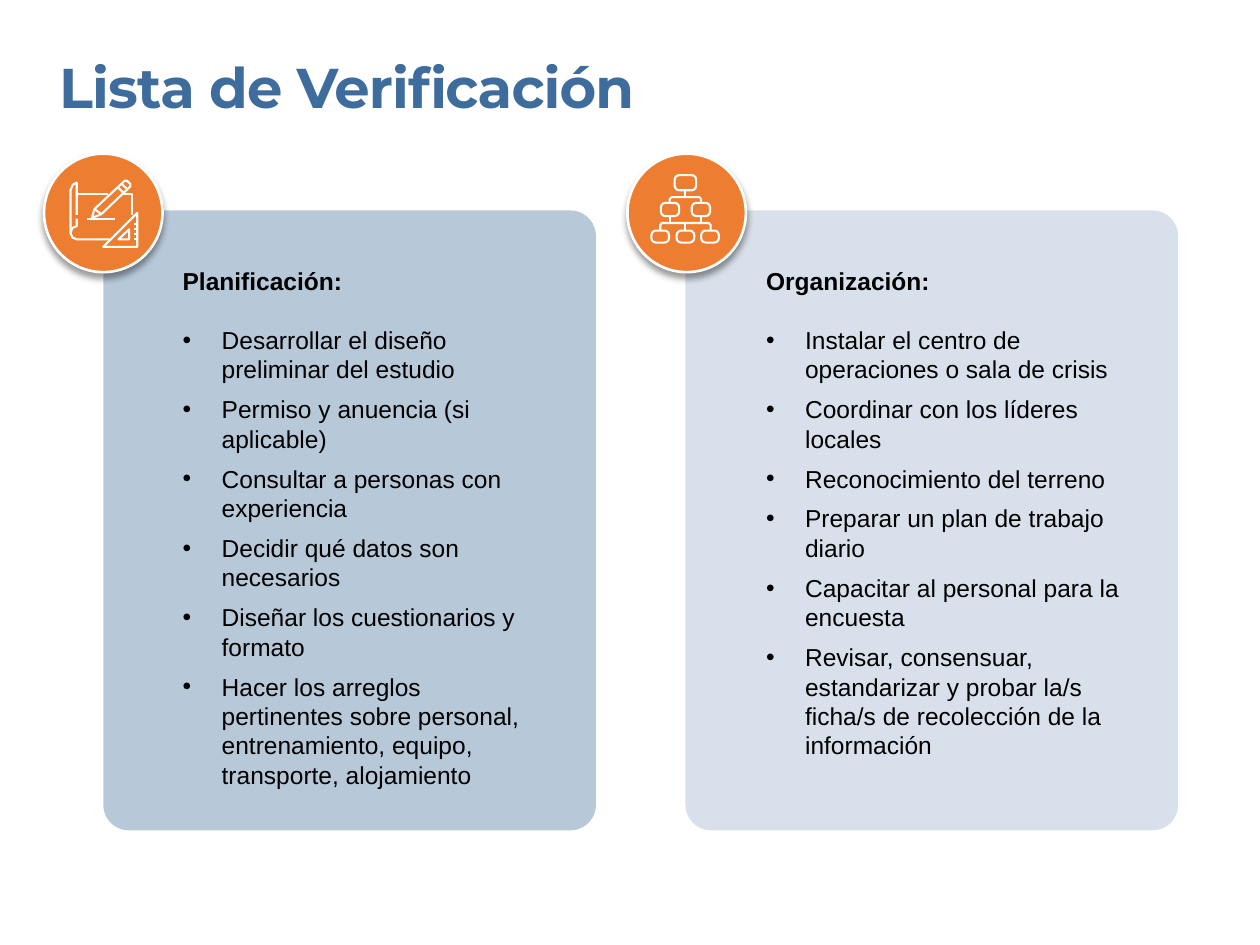
"""Build the checklist slide with its planning and organisation panels."""

from dataclasses import dataclass
from math import cos, radians, sin

from lxml import etree
from pptx import Presentation
from pptx.dml.color import RGBColor
from pptx.enum.shapes import MSO_SHAPE
from pptx.enum.text import MSO_ANCHOR, MSO_AUTO_SIZE, PP_ALIGN
from pptx.oxml.ns import qn
from pptx.shapes.autoshape import Shape
from pptx.slide import Slide
from pptx.text.text import TextFrame
from pptx.util import Inches, Pt

ROUNDED = MSO_SHAPE.ROUNDED_RECTANGLE
OVAL = MSO_SHAPE.OVAL
TOP = MSO_ANCHOR.TOP
LEFT = PP_ALIGN.LEFT
NO_AUTO_SIZE = MSO_AUTO_SIZE.NONE
TITLE_ONLY = 5
ICON_UNIT = Inches(1) / 1000


@dataclass(frozen=True)
class Theme:
    blue: RGBColor = RGBColor(0x3D, 0x6C, 0x9D)
    pale_blue: RGBColor = RGBColor(0xB7, 0xC8, 0xD9)
    orange: RGBColor = RGBColor(0xED, 0x7D, 0x31)
    white: RGBColor = RGBColor(0xFF, 0xFF, 0xFF)
    black: RGBColor = RGBColor(0, 0, 0)
    title_font: str = "Montserrat"
    body_font: str = "Arial"
    title_size: Pt = Pt(32)
    body_size: Pt = Pt(14)
    icon_line: Pt = Pt(1.2)
    badge_line: Pt = Pt(1.5)


@dataclass(frozen=True)
class Stroke:
    points: tuple[tuple[float, float], ...]
    closed: bool = False


@dataclass(frozen=True)
class Icon:
    left: float
    top: float
    strokes: tuple[Stroke, ...]


@dataclass(frozen=True)
class Panel:
    left: float
    badge_left: float
    text_left: float
    text_width: float
    text_height: float
    fill: RGBColor
    opacity: int
    heading: str
    items: tuple[str, ...]
    icons: tuple[Icon, ...]


def rounded_box(x: float, y: float, width: float, height: float, radius: float = 35) -> Stroke:
    """Return a closed rectangle stroke with rounded corners."""
    corners = ((x + width - radius, y + height - radius), (x + radius, y + height - radius),
               (x + radius, y + radius), (x + width - radius, y + radius))
    return Stroke(tuple(
        (center_x + radius * cos(radians(angle)), center_y + radius * sin(radians(angle)))
        for quarter, (center_x, center_y) in enumerate(corners)
        for angle in range(quarter * 90, quarter * 90 + 91, 30)
    ), True)


THEME = Theme()

BLUEPRINT = Icon(0.55, 1.42, (
    Stroke(((60, 285), (60, 30), (30, 45), (10, 90), (10, 430), (25, 465), (60, 480), (325, 480))),
    Stroke(((60, 315), (60, 375), (25, 390), (10, 430))),
    Stroke(((60, 120), (310, 120))),
    Stroke(((430, 120), (500, 120), (500, 285))),
    Stroke(((180, 310), (200, 240), (440, 15), (460, 15), (485, 40), (485, 60), (255, 280)), True),
    Stroke(((200, 240), (255, 280))),
    Stroke(((385, 65), (435, 115))),
    Stroke(((415, 40), (465, 85))),
    Stroke(((140, 320), (365, 320))),
    Stroke(((270, 540), (540, 270), (540, 540)), True),
    *(Stroke(((515, y), (540, y))) for y in range(360, 520, 40)),
))

SET_SQUARE_HOLE = Icon(0.93, 1.81, (Stroke(((10, 90), (95, 10), (95, 90)), True),))

HIERARCHY = Icon(5.16, 1.38, (
    Stroke(((280, 130), (280, 185))),
    Stroke(((155, 230), (155, 200), (170, 185), (390, 185), (405, 200), (405, 230))),
    Stroke(((155, 335), (155, 390))),
    Stroke(((405, 335), (405, 390))),
    Stroke(((80, 450), (80, 405), (95, 390), (465, 390), (480, 405), (480, 450))),
    Stroke(((280, 390), (280, 450))),
    rounded_box(195, 10, 170, 120),
    *(rounded_box(x, 230, 145, 105) for x in (85, 330)),
    *(rounded_box(x, 450, 140, 95) for x in (10, 210, 405)),
))

PANELS = (
    Panel(0.82, 0.35, 1.45, 2.9, 4.19, THEME.pale_blue, 100, "Planificación:", (
        "Desarrollar el diseño preliminar del estudio",
        "Permiso y anuencia (si aplicable)",
        "Consultar a personas con experiencia",
        "Decidir qué datos son necesarios",
        "Diseñar los cuestionarios y formato",
        "Hacer los arreglos pertinentes sobre personal, entrenamiento, equipo, "
        "transporte, alojamiento",
    ), (BLUEPRINT, SET_SQUARE_HOLE)),
    Panel(5.44, 4.98, 6.08, 3.01, 3.95, THEME.blue, 20, "Organización:", (
        "Instalar el centro de operaciones o sala de crisis",
        "Coordinar con los líderes locales",
        "Reconocimiento del terreno",
        "Preparar un plan de trabajo diario",
        "Capacitar al personal para la encuesta",
        "Revisar, consensuar, estandarizar y probar la/s ficha/s de recolección "
        "de la información",
    ), (HIERARCHY,)),
)


def prepare_frame(frame: TextFrame) -> None:
    """Give a text frame wrapping, no margins and top anchoring."""
    frame.word_wrap = True
    frame.auto_size = NO_AUTO_SIZE
    frame.vertical_anchor = TOP
    frame.margin_left = frame.margin_right = frame.margin_top = frame.margin_bottom = 0


def add_title(slide: Slide) -> None:
    """Place and format the slide title."""
    title = slide.shapes.title
    title.left, title.top = Inches(0.47), Inches(0.42)
    title.width, title.height = Inches(8.55), Inches(0.54)
    prepare_frame(title.text_frame)
    para = title.text_frame.paragraphs[0]
    para.alignment = LEFT
    span = para.add_run()
    span.text = "Lista de Verificación"
    span.font.name, span.font.size, span.font.bold = THEME.title_font, THEME.title_size, True
    span.font.color.rgb = THEME.blue
    span._r.get_or_add_rPr().set("spc", "-50")


def fill_shape(shape: Shape, color: RGBColor, opacity: int = 100) -> None:
    """Give a shape a solid fill, partly transparent if asked."""
    shape.fill.solid()
    shape.fill.fore_color.rgb = color
    if opacity < 100:
        element = shape._element.spPr.find(f"{qn('a:solidFill')}/{qn('a:srgbClr')}")
        etree.SubElement(element, qn("a:alpha"), val=str(opacity * 1000))


def add_shadow(shape: Shape) -> None:
    """Give a shape a soft shadow below it."""
    shape.shadow.inherit = False
    effects = shape._element.spPr.find(qn("a:effectLst"))
    shadow = etree.SubElement(effects, qn("a:outerShdw"), blurRad=str(Pt(4)),
                              dist=str(Pt(3)), dir="5400000", rotWithShape="0")
    color = etree.SubElement(shadow, qn("a:srgbClr"), val=str(THEME.black))
    etree.SubElement(color, qn("a:alpha"), val="40000")


def add_icon(slide: Slide, icon: Icon) -> None:
    """Draw the white strokes of an icon."""
    builder = slide.shapes.build_freeform(*icon.strokes[0].points[0], scale=ICON_UNIT)
    for index, stroke in enumerate(icon.strokes):
        if index:
            builder.move_to(*stroke.points[0])
        builder.add_line_segments(stroke.points[1:], close=stroke.closed)
    drawing = builder.convert_to_shape(Inches(icon.left), Inches(icon.top))
    drawing.shadow.inherit = False
    drawing.fill.background()
    drawing.line.color.rgb = THEME.white
    drawing.line.width = THEME.icon_line


def add_bullet(frame: TextFrame, text: str) -> None:
    """Append one bulleted paragraph."""
    para = frame.add_paragraph()
    para.text = text
    para.space_after = Pt(6)
    properties = para._p.get_or_add_pPr()
    properties.set("marL", str(Inches(0.31)))
    properties.set("indent", str(-Inches(0.31)))
    color = etree.SubElement(properties, qn("a:buClr"))
    etree.SubElement(color, qn("a:srgbClr"), val=str(THEME.black))
    etree.SubElement(properties, qn("a:buFont"), typeface=THEME.body_font)
    etree.SubElement(properties, qn("a:buChar"), char="•")


def add_checklist(slide: Slide, panel: Panel) -> None:
    """Write the heading and items of a panel."""
    box = slide.shapes.add_textbox(Inches(panel.text_left), Inches(2.11),
                                   Inches(panel.text_width), Inches(panel.text_height))
    frame = box.text_frame
    prepare_frame(frame)
    frame.paragraphs[0].text = panel.heading
    frame.paragraphs[0].space_after = Pt(16.9)
    for item in panel.items:
        add_bullet(frame, item)
    for para in frame.paragraphs:
        para.font.name, para.font.size = THEME.body_font, THEME.body_size
        para.font.color.rgb = THEME.black
        para.font.bold = para.text == panel.heading


def add_panel(slide: Slide, panel: Panel) -> None:
    """Draw a panel with its badge, icons and checklist."""
    card = slide.shapes.add_shape(ROUNDED, Inches(panel.left), Inches(1.67),
                                  Inches(3.91), Inches(4.92))
    card.adjustments[0] = 0.052
    card.shadow.inherit = False
    fill_shape(card, panel.fill, panel.opacity)
    card.line.fill.background()
    badge = slide.shapes.add_shape(OVAL, Inches(panel.badge_left), Inches(1.22),
                                   Inches(0.94), Inches(0.94))
    fill_shape(badge, THEME.orange)
    badge.line.color.rgb, badge.line.width = THEME.white, THEME.badge_line
    add_shadow(badge)
    add_checklist(slide, panel)
    for icon in panel.icons:
        add_icon(slide, icon)


def main() -> None:
    """Create and save the deck."""
    deck = Presentation()
    deck.slide_width, deck.slide_height = Inches(10), Inches(7.5)
    page = deck.slides.add_slide(deck.slide_layouts[TITLE_ONLY])
    add_title(page)
    for panel in PANELS:
        add_panel(page, panel)
    deck.save("out.pptx")


if __name__ == "__main__":
    main()
